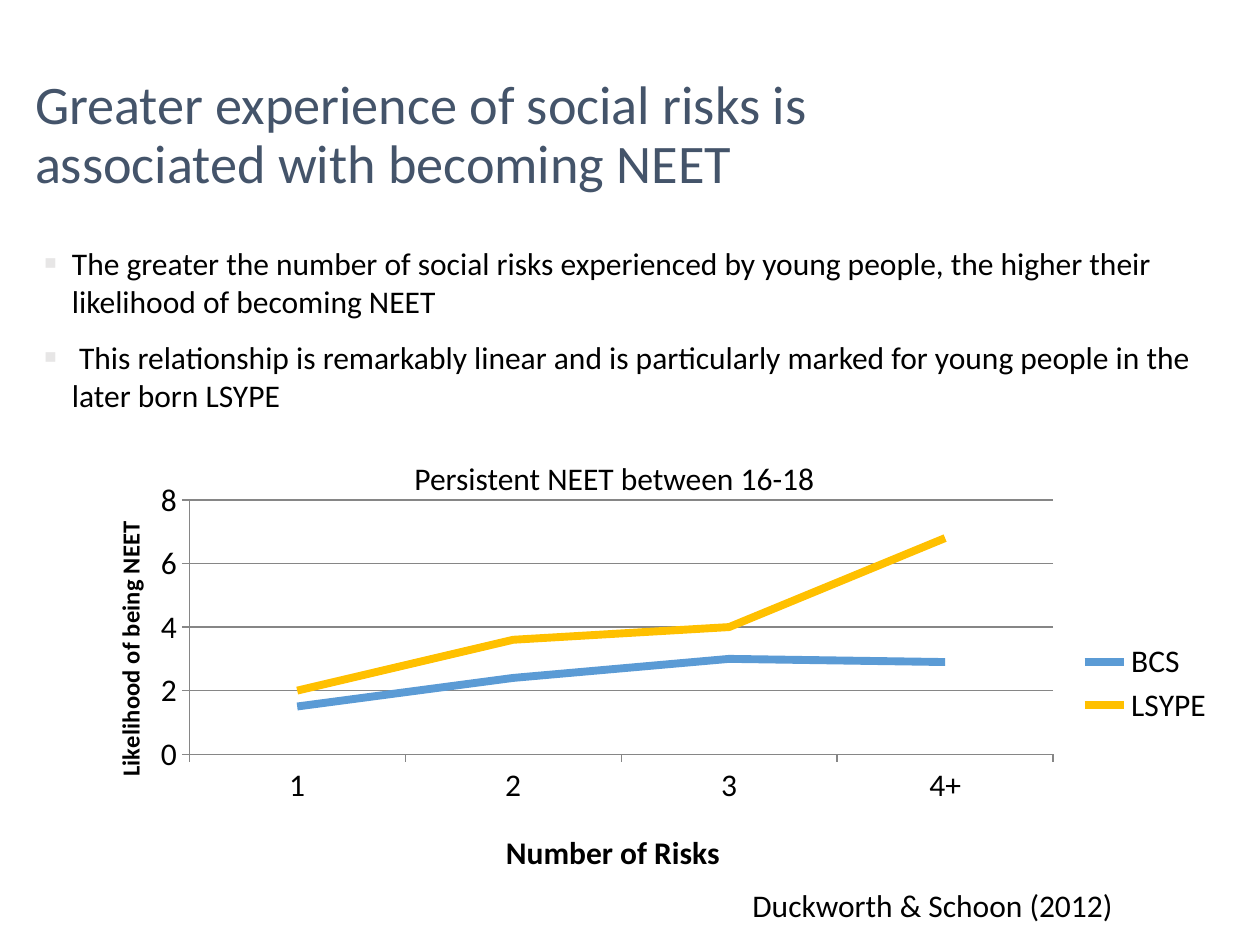
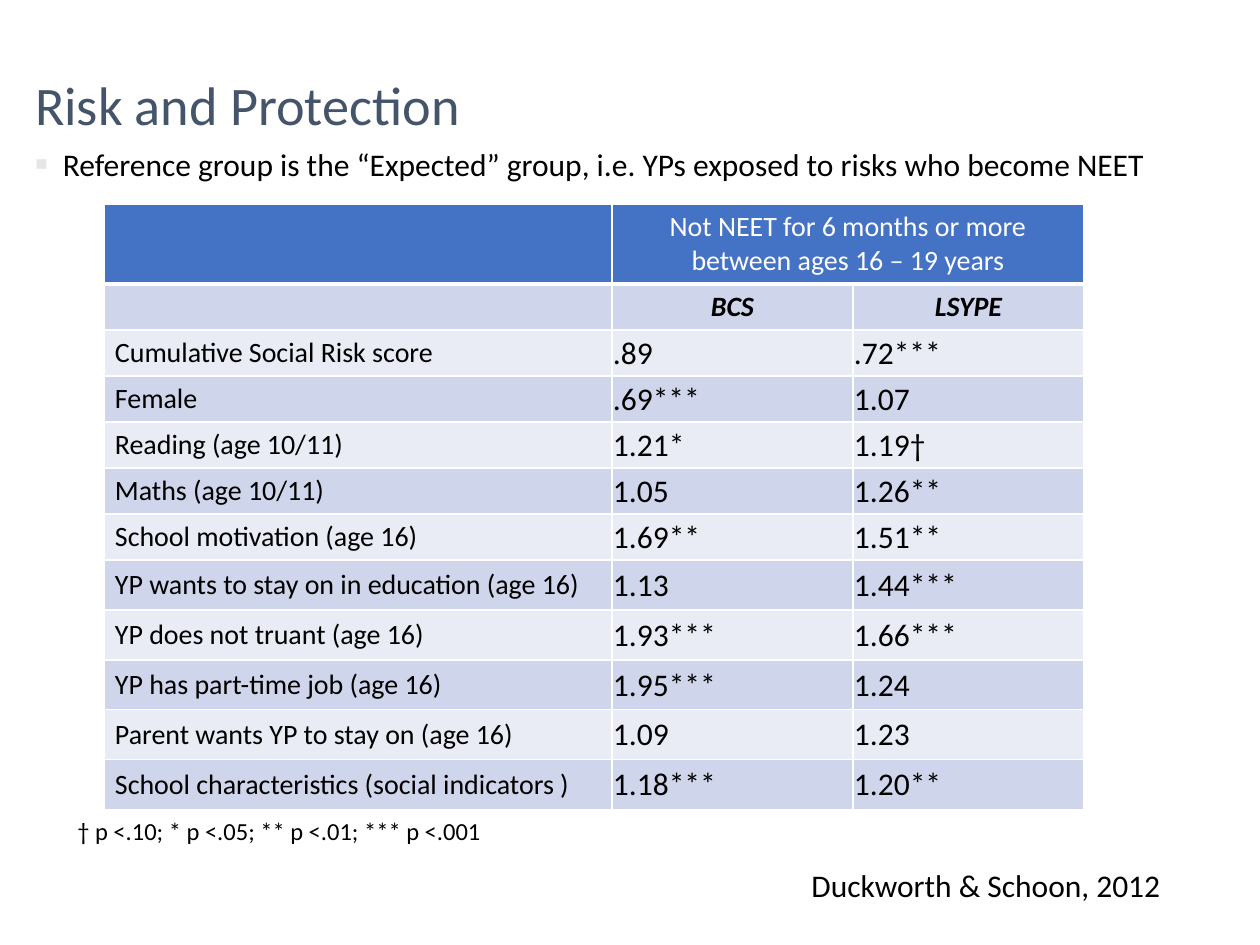
from dataclasses import dataclass

import lxml.etree
import pptx
import pptx.chart.data
import pptx.dml.color
import pptx.enum.chart
import pptx.enum.text
import pptx.oxml
import pptx.oxml.ns
import pptx.util

EMU_PER_PX = 914400 / 126
ALIGN = pptx.enum.text.PP_ALIGN
ANCHOR = pptx.enum.text.MSO_ANCHOR
AUTO_SIZE = pptx.enum.text.MSO_AUTO_SIZE


@dataclass(frozen=True)
class Theme:
    font: str = "Calibri"
    title_color: str = "44546A"
    text: str = "000000"
    white: str = "FFFFFF"
    bullet: str = "E7E6E6"
    grid: str = "868686"
    bcs: str = "5B9BD5"
    lsype: str = "FFC000"
    header: str = "4472C4"
    bands: tuple = ("CFD5EA", "E9EBF5")
    title_size: int = 31
    title_spacing: float = 33.3
    body_size: int = 18
    label_size: int = 16
    note_size: int = 14


THEME = Theme()

RISK_SCORES = [
    ("Cumulative Social Risk score", ".89", ".72***"),
    ("Female", ".69***", "1.07"),
    ("Reading (age 10/11)", "1.21*", "1.19†"),
    ("Maths (age 10/11)", "1.05", "1.26**"),
    ("School motivation (age 16)", "1.69**", "1.51**"),
    ("YP wants to stay on in education (age 16)", "1.13", "1.44***"),
    ("YP does not truant (age 16)", "1.93***", "1.66***"),
    ("YP has part-time job (age 16)", "1.95***", "1.24"),
    ("Parent wants YP to stay on (age 16)", "1.09", "1.23"),
    ("School characteristics (social indicators )", "1.18***", "1.20**"),
]


def px(length):
    return pptx.util.Emu(round(length * EMU_PER_PX))


def rgb(value):
    return pptx.dml.color.RGBColor.from_string(value)


def style_font(font, size, color=THEME.text, bold=False, italic=False):
    font.name = THEME.font
    font.size = pptx.util.Pt(size)
    font.color.rgb = rgb(color)
    font.bold = bold
    font.italic = italic


def set_margins(target, left, top, right, bottom):
    target.margin_left, target.margin_top = px(left), px(top)
    target.margin_right, target.margin_bottom = px(right), px(bottom)


def add_titled_page(deck, title, height):
    page = deck.slides.add_slide(deck.slide_layouts[5])
    box = page.shapes.title
    box.left, box.top, box.width, box.height = map(px, (35, 37, 847, height))
    frame = box.text_frame
    frame.text = title
    frame.word_wrap = True
    frame.auto_size = AUTO_SIZE.NONE
    frame.vertical_anchor = ANCHOR.BOTTOM
    set_margins(frame, 0, 0, 0, 0)
    para = frame.paragraphs[0]
    para.alignment = ALIGN.LEFT
    para.line_spacing = pptx.util.Pt(THEME.title_spacing)
    style_font(para.font, THEME.title_size, THEME.title_color)
    return page


def add_text(page, text, bounds, size=THEME.body_size):
    frame = page.shapes.add_textbox(*map(px, bounds)).text_frame
    frame.word_wrap = True
    frame.auto_size = AUTO_SIZE.SHAPE_TO_FIT_TEXT
    frame.text = text
    style_font(frame.paragraphs[0].font, size)


def set_bullet(para):
    properties = para._p.get_or_add_pPr()
    properties.set("marL", str(px(28)))
    properties.set("indent", str(px(-28)))
    bullet = pptx.oxml.parse_xml(
        f'<a:pPr {pptx.oxml.ns.nsdecls("a")}>'
        f'<a:buClr><a:srgbClr val="{THEME.bullet}"/></a:buClr>'
        '<a:buSzPct val="120000"/><a:buFont typeface="Calibri"/>'
        '<a:buChar char="▪"/></a:pPr>'
    )
    for position, element in enumerate(list(bullet), start=1):
        properties.insert(position, element)


def add_bullets(page, lines, bounds):
    frame = page.shapes.add_textbox(*map(px, bounds)).text_frame
    frame.word_wrap = True
    set_margins(frame, 0, 0, 0, 0)
    frame.text = "\n".join(lines)
    for para in frame.paragraphs:
        para.space_before = pptx.util.Pt(10.5)
        set_bullet(para)
        style_font(para.font, THEME.body_size)


def place_chart_part(element, index, **fractions):
    for layout in element.findall(pptx.oxml.ns.qn("c:layout")):
        element.remove(layout)
    target = '<c:layoutTarget val="inner"/>' if element.tag.endswith("plotArea") else ""
    modes = "".join(f'<c:{name}Mode val="edge"/>' for name in "xy")
    sizes = "".join(f'<c:{name} val="{value}"/>' for name, value in fractions.items())
    element.insert(index, pptx.oxml.parse_xml(
        f'<c:layout {pptx.oxml.ns.nsdecls("c")}><c:manualLayout>'
        f"{target}{modes}{sizes}</c:manualLayout></c:layout>"
    ))


def style_axis(axis, title, title_size, x, y):
    style_font(axis.tick_labels.font, THEME.body_size)
    axis.major_tick_mark = pptx.enum.chart.XL_TICK_MARK.OUTSIDE
    axis.format.line.color.rgb = rgb(THEME.grid)
    axis.axis_title.text_frame.text = title
    style_font(axis.axis_title.text_frame.paragraphs[0].font, title_size, bold=True)
    place_chart_part(axis.axis_title._element, 1, x=x, y=y)


def add_risk_chart(page, bounds):
    data = pptx.chart.data.CategoryChartData()
    data.categories = ["1", "2", "3", "4+"]
    data.add_series("BCS", (1.5, 2.4, 3, 2.9))
    data.add_series("LSYPE", (2, 3.6, 4, 6.8))
    chart = page.shapes.add_chart(
        pptx.enum.chart.XL_CHART_TYPE.LINE, *map(px, bounds), data
    ).chart
    chart.has_title = False
    style_font(chart.font, THEME.body_size)
    plot = chart.plots[0]
    plot.vary_by_categories = False
    for series, color in zip(plot.series, (THEME.bcs, THEME.lsype)):
        series.smooth = False
        series.marker.style = pptx.enum.chart.XL_MARKER_STYLE.NONE
        series.format.line.color.rgb = rgb(color)
        series.format.line.width = pptx.util.Pt(4.5)

    style_axis(chart.category_axis, "Number of Risks", THEME.body_size, 0.37, 0.84)
    style_axis(chart.value_axis, "Likelihood of being NEET", THEME.note_size, 0.03, 0.1)
    axis = chart.value_axis
    axis.minimum_scale, axis.maximum_scale, axis.major_unit = 0, 8, 2
    axis.has_major_gridlines = True
    axis.major_gridlines.format.line.color.rgb = rgb(THEME.grid)

    chart.has_legend = True
    chart.legend.position = pptx.enum.chart.XL_LEGEND_POSITION.RIGHT
    chart.legend.include_in_layout = False
    style_font(chart.legend.font, THEME.body_size)
    place_chart_part(chart.legend._element, 1, x=0.87, y=0.39, w=0.12, h=0.22)
    plot_area = chart._chartSpace.chart.plotArea
    place_chart_part(plot_area, 0, x=0.1, y=0.06, w=0.75, h=0.61)


def set_borders(cell, bottom=1):
    properties = cell._tc.get_or_add_tcPr()
    for position, (side, width) in enumerate(zip("LRTB", (1, 1, 1, bottom))):
        properties.insert(position, pptx.oxml.parse_xml(
            f'<a:ln{side} {pptx.oxml.ns.nsdecls("a")} w="{pptx.util.Pt(width)}">'
            f'<a:solidFill><a:srgbClr val="{THEME.white}"/></a:solidFill></a:ln{side}>'
        ))


def fill_cell(cell, text, row, column):
    is_header, is_score = row == 0, row > 1 and column > 0
    cell.text = text
    cell.fill.solid()
    cell.fill.fore_color.rgb = rgb(THEME.header if is_header else THEME.bands[(row - 1) % 2])
    set_borders(cell, bottom=3 if is_header else 1)
    cell.vertical_anchor = ANCHOR.MIDDLE
    if is_score or not text:
        set_margins(cell, 1, 1, 1, 0)
    else:
        set_margins(cell, 11, 6, 11, 6)
    para = cell.text_frame.paragraphs[0]
    if is_score:
        para.alignment = ALIGN.JUSTIFY
    elif column > 0:
        para.alignment = ALIGN.CENTER
    style_font(
        para.font,
        THEME.body_size if is_score else THEME.label_size,
        THEME.white if is_header else THEME.text,
        bold=row == 1,
        italic=row == 1,
    )


def add_score_table(page, left, top):
    rows = [
        ("", "Not NEET for 6 months or more between ages 16 – 19 years", ""),
        ("", "BCS", "LSYPE"),
        *RISK_SCORES,
    ]
    widths = (508, 241, 231)
    heights = [80] + [46] * 6 + [50] * 5
    bounds = map(px, (left, top, sum(widths), sum(heights)))
    table = page.shapes.add_table(len(rows), len(widths), *bounds).table
    for column, width in zip(table.columns, widths):
        column.width = px(width)
    for row, height in zip(table.rows, heights):
        row.height = px(height)
    for row, texts in enumerate(rows):
        for column, text in enumerate(texts):
            fill_cell(table.cell(row, column), text, row, column)
    table.cell(0, 1).merge(table.cell(0, 2))


def build_social_risks(deck):
    page = add_titled_page(
        deck, "Greater experience of social risks is associated with becoming NEET", 157
    )
    add_bullets(page, [
        "The greater the number of social risks experienced by young people, "
        "the higher their likelihood of becoming NEET",
        " This relationship is remarkably linear and is particularly marked "
        "for young people in the later born LSYPE",
    ], (44, 244, 1171, 571))
    add_risk_chart(page, (74, 475, 1152, 417))
    add_text(page, "Persistent NEET between 16-18", (402, 453, 472, 49))
    add_text(page, "Duckworth & Schoon (2012)", (740, 880, 496, 50))


def build_protection(deck):
    page = add_titled_page(deck, "Risk and Protection", 99)
    add_bullets(page, [
        "Reference group is the “Expected” group, i.e. YPs exposed to risks who become NEET",
    ], (35, 145, 1171, 558))
    add_score_table(page, 104, 204)
    add_text(
        page, "† p <.10; * p <.05; ** p <.01; *** p <.001", (65, 810, 667, 79), THEME.note_size
    )
    add_text(page, "Duckworth & Schoon, 2012", (799, 860, 461, 50))


def main():
    deck = pptx.Presentation()
    deck.slide_width, deck.slide_height = px(1260), px(945)
    build_social_risks(deck)
    build_protection(deck)
    deck.save("out.pptx")


if __name__ == "__main__":
    main()
